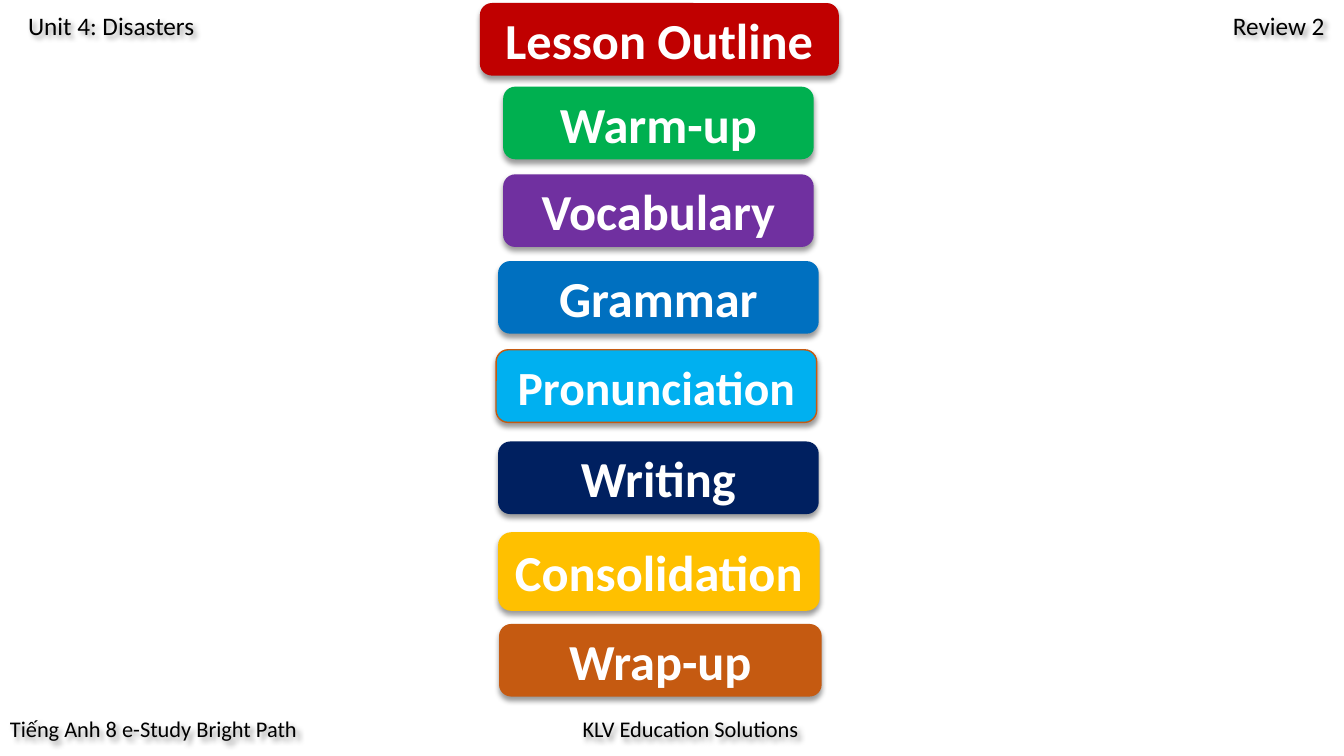
from dataclasses import dataclass
from typing import Optional

from lxml import etree
from pptx import Presentation
from pptx.dml.color import RGBColor
from pptx.enum.shapes import MSO_SHAPE
from pptx.enum.text import MSO_ANCHOR, MSO_AUTO_SIZE, PP_ALIGN
from pptx.oxml.ns import qn
from pptx.util import Inches, Pt

ROUNDED = MSO_SHAPE.ROUNDED_RECTANGLE
MIDDLE = MSO_ANCHOR.MIDDLE
CENTER = PP_ALIGN.CENTER
LEFT = PP_ALIGN.LEFT
GROW = MSO_AUTO_SIZE.SHAPE_TO_FIT_TEXT


@dataclass(frozen=True)
class Theme:
    font: str = "Calibri"
    black: str = "000000"
    white: str = "FFFFFF"
    red: str = "C00000"
    green: str = "00B050"
    purple: str = "7030A0"
    blue: str = "0070C0"
    sky: str = "00B0F0"
    navy: str = "002060"
    gold: str = "FFC000"
    rust: str = "C55A11"
    header_size: int = 18
    footer_size: int = 16
    step_size: int = 36
    long_step_size: int = 34


THEME = Theme()


@dataclass(frozen=True)
class Caption:
    text: str
    left: float
    top: float
    width: float
    height: float
    size: int
    wrap: bool


@dataclass(frozen=True)
class Step:
    text: str
    left: float
    top: float
    width: float
    fill: str
    height: float = 0.72
    size: int = THEME.step_size
    outline: Optional[str] = None


HEADER = {"top": 0.05, "height": 0.4, "size": THEME.header_size, "wrap": True}
FOOTER = {"top": 7.05, "height": 0.37, "size": THEME.footer_size, "wrap": False}

CAPTIONS = [
    Caption("Review 2", left=12.13, width=1.14, **HEADER),
    Caption("Unit 4: Disasters", left=0.18, width=4.91, **HEADER),
    Caption("Tiếng Anh 8 e-Study Bright Path", left=0, width=3.21, **FOOTER),
    Caption("KLV Education Solutions", left=5.68, width=2.46, **FOOTER),
]

STEPS = [
    Step("Lesson Outline", 4.76, 0.03, 3.56, THEME.red),
    Step("Warm-up", 4.99, 0.86, 3.08, THEME.green),
    Step("Vocabulary", 4.99, 1.73, 3.08, THEME.purple),
    Step("Grammar", 4.94, 2.59, 3.18, THEME.blue),
    Step("Pronunciation", 4.92, 3.47, 3.18, THEME.sky,
         size=THEME.long_step_size, outline=THEME.rust),
    Step("Writing", 4.94, 4.38, 3.18, THEME.navy),
    Step("Consolidation", 4.94, 5.28, 3.19, THEME.gold, height=0.78),
    Step("Wrap-up", 4.95, 6.19, 3.2, THEME.rust),
]


def add_shadow(shape, angle: int) -> None:
    """Cast a soft black shadow in the given direction, in degrees."""
    shape.shadow.inherit = False
    effects = shape._element.spPr.find(qn("a:effectLst"))
    shadow = etree.SubElement(
        effects, qn("a:outerShdw"), blurRad=str(Pt(4)), dist=str(Pt(3)),
        dir=str(angle * 60000), algn="tl", rotWithShape="0")
    color = etree.SubElement(shadow, qn("a:srgbClr"), val=THEME.black)
    etree.SubElement(color, qn("a:alpha"), val="40000")


def write_text(box, text: str, color: str, align, **font_format) -> None:
    para = box.text_frame.paragraphs[0]
    para.alignment = align
    span = para.add_run()
    span.text = text
    span.font.color.rgb = RGBColor.from_string(color)
    for name, value in {"name": THEME.font, **font_format}.items():
        setattr(span.font, name, value)


def add_caption(page, caption: Caption) -> None:
    box = page.shapes.add_textbox(
        Inches(caption.left), Inches(caption.top),
        Inches(caption.width), Inches(caption.height))
    box.text_frame.word_wrap = caption.wrap
    box.text_frame.auto_size = GROW
    add_shadow(box, angle=45)
    write_text(box, caption.text, THEME.black, LEFT, size=Pt(caption.size))


def add_step(page, step: Step) -> None:
    box = page.shapes.add_shape(
        ROUNDED, Inches(step.left), Inches(step.top),
        Inches(step.width), Inches(step.height))
    box.fill.solid()
    box.fill.fore_color.rgb = RGBColor.from_string(step.fill)
    if step.outline:
        box.line.color.rgb = RGBColor.from_string(step.outline)
        box.line.width = Pt(1)
    else:
        box.line.fill.background()
    add_shadow(box, angle=90)
    box.text_frame.word_wrap = True
    box.text_frame.vertical_anchor = MIDDLE
    write_text(box, step.text, THEME.white, CENTER, size=Pt(step.size), bold=True)


def main() -> None:
    deck = Presentation()
    deck.slide_width, deck.slide_height = Inches(13.33), Inches(7.5)
    page = deck.slides.add_slide(deck.slide_layouts[6])

    # Header and footer captions
    for caption in CAPTIONS:
        add_caption(page, caption)

    # Lesson title and its steps
    for step in STEPS:
        add_step(page, step)

    deck.save("out.pptx")


if __name__ == "__main__":
    main()
